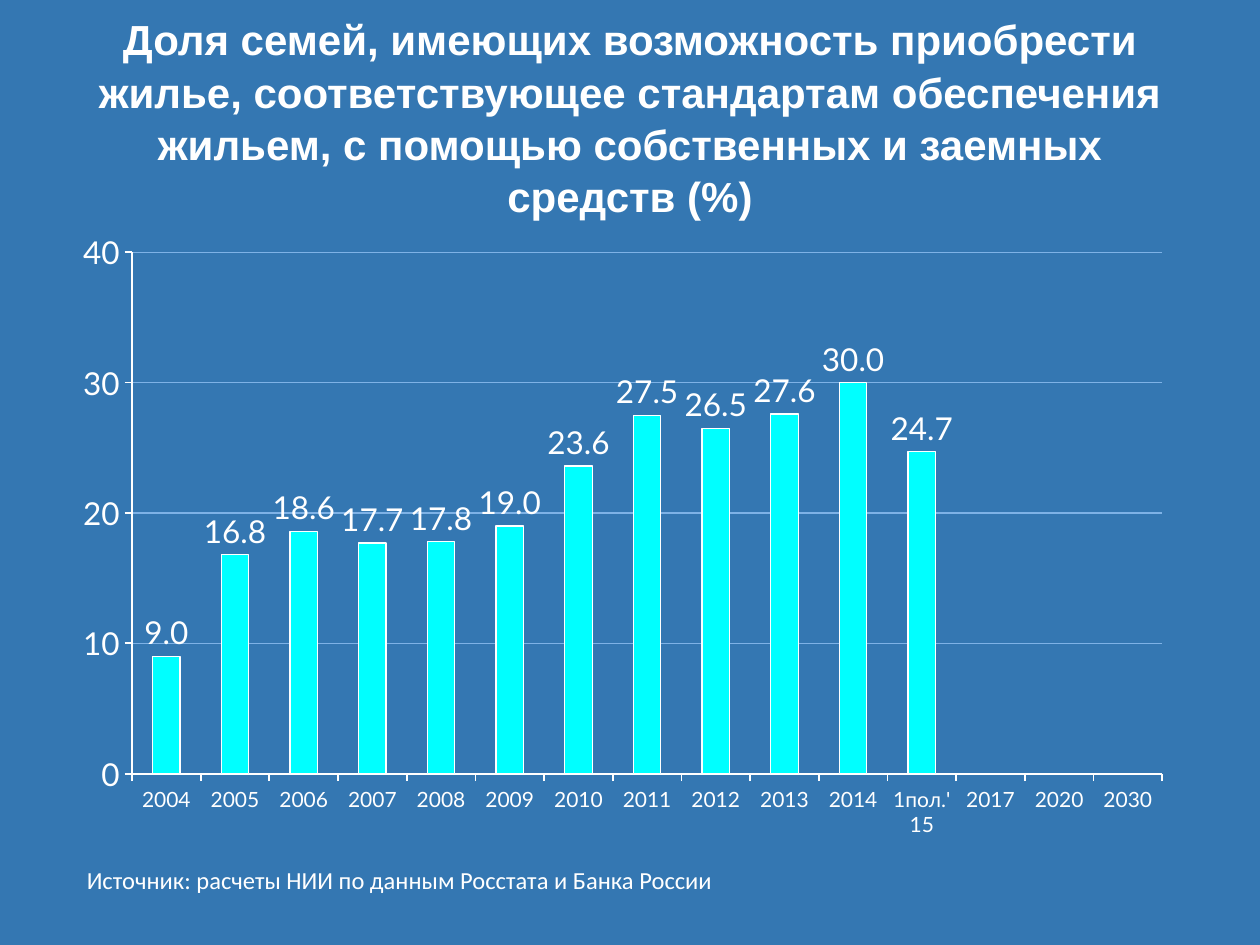
import pptx
import pptx.util
import pptx.chart.data
import pptx.dml.color
import pptx.enum.chart
import pptx.enum.text
import pptx.oxml
import pptx.oxml.ns

Inches = pptx.util.Inches
Pt = pptx.util.Pt

TITLE = ("Доля семей, имеющих возможность приобрести жилье, соответствующее стандартам "
         "обеспечения жильем, с помощью собственных и заемных средств (%)")
SOURCE = "Источник: расчеты НИИ по данным Росстата и Банка России"
SHARES = [
    ("2004", 9), ("2005", 16.8), ("2006", 18.6), ("2007", 17.7), ("2008", 17.8),
    ("2009", 19), ("2010", 23.6), ("2011", 27.5), ("2012", 26.5), ("2013", 27.6),
    ("2014", 30), ("1пол.'15", 24.7), ("2017", None), ("2020", None), ("2030", None),
]
COLORS = {"background": "3477B2", "text": "FFFFFF", "bar": "00FFFF", "grid": "7EB2E6"}
PLOT_AREA = {"x": 0.061, "y": 0.041, "w": 0.927, "h": 0.838}


def color(name):
    return pptx.dml.color.RGBColor.from_string(COLORS[name])


def format_font(font, size, name):
    font.size = Pt(size)
    font.name = name
    font.color.rgb = color("text")


def write_text(shape, text, size, font, bold=False, align=None, anchor=None, spacing=None):
    frame = shape.text_frame
    frame.word_wrap = True
    frame.vertical_anchor = anchor
    paragraph = frame.paragraphs[0]
    paragraph.alignment = align
    paragraph.line_spacing = spacing
    run = paragraph.add_run()
    run.text = text
    run.font.bold = bold
    format_font(run.font, size, font)


def format_line(line, name, width=0.75):
    line.color.rgb = color(name)
    line.width = Pt(width)


def set_plot_area(chart):
    plot_area = chart._chartSpace.chart.plotArea
    for layout in plot_area.findall(pptx.oxml.ns.qn("c:layout")):
        plot_area.remove(layout)
    modes = '<c:layoutTarget val="inner"/><c:xMode val="edge"/><c:yMode val="edge"/>'
    sizes = "".join(f'<c:{key} val="{value}"/>' for key, value in PLOT_AREA.items())
    plot_area.insert(0, pptx.oxml.parse_xml(
        f'<c:layout {pptx.oxml.ns.nsdecls("c")}><c:manualLayout>'
        f'{modes}{sizes}</c:manualLayout></c:layout>'))


def add_share_chart(slide):
    data = pptx.chart.data.CategoryChartData()
    data.categories = [period for period, share in SHARES]
    data.add_series("Series 1", [share for period, share in SHARES])
    chart = slide.shapes.add_chart(
        pptx.enum.chart.XL_CHART_TYPE.COLUMN_CLUSTERED,
        Inches(0.51), Inches(1.8), Inches(8.82), Inches(4.94), data).chart
    chart.has_legend = False
    chart.has_title = False
    format_font(chart.font, 18, "Lato")
    set_plot_area(chart)

    for axis, size in ((chart.category_axis, 12), (chart.value_axis, 18)):
        axis.major_tick_mark = pptx.enum.chart.XL_TICK_MARK.OUTSIDE
        axis.minor_tick_mark = pptx.enum.chart.XL_TICK_MARK.NONE
        format_line(axis.format.line, "text", 1)
        format_font(axis.tick_labels.font, size, "Lato")

    value_axis = chart.value_axis
    value_axis.minimum_scale = 0
    value_axis.maximum_scale = 40
    value_axis.major_unit = 10
    value_axis.tick_labels.number_format = "#,##0"
    value_axis.tick_labels.number_format_is_linked = False
    format_line(value_axis.major_gridlines.format.line, "grid")

    plot = chart.plots[0]
    plot.gap_width = 150
    plot.vary_by_categories = False
    series = plot.series[0]
    series.format.fill.solid()
    series.format.fill.fore_color.rgb = color("bar")
    format_line(series.format.line, "text")
    labels = series.data_labels
    labels.show_value = True
    labels.number_format = "#,##0.0"
    labels.number_format_is_linked = False
    labels.position = pptx.enum.chart.XL_LABEL_POSITION.OUTSIDE_END
    format_font(labels.font, 18, "Lato")


def main():
    presentation = pptx.Presentation()
    presentation.slide_width = Inches(10)
    presentation.slide_height = Inches(7.5)
    slide = presentation.slides.add_slide(presentation.slide_layouts[5])
    slide.background.fill.solid()
    slide.background.fill.fore_color.rgb = color("background")

    title = slide.shapes.title
    title.left, title.top = Inches(0.5), Inches(0.3)
    title.width, title.height = Inches(9), Inches(1.25)
    write_text(title, TITLE, 24, "Arial", bold=True, spacing=1.04,
               align=pptx.enum.text.PP_ALIGN.CENTER,
               anchor=pptx.enum.text.MSO_ANCHOR.MIDDLE)
    title.text_frame.auto_size = pptx.enum.text.MSO_AUTO_SIZE.NONE

    add_share_chart(slide)

    source = slide.shapes.add_textbox(Inches(0.59), Inches(6.82), Inches(7.32), Inches(0.34))
    write_text(source, SOURCE, 14, "Calibri")
    source.text_frame.auto_size = pptx.enum.text.MSO_AUTO_SIZE.SHAPE_TO_FIT_TEXT

    presentation.save("out.pptx")


if __name__ == "__main__":
    main()
